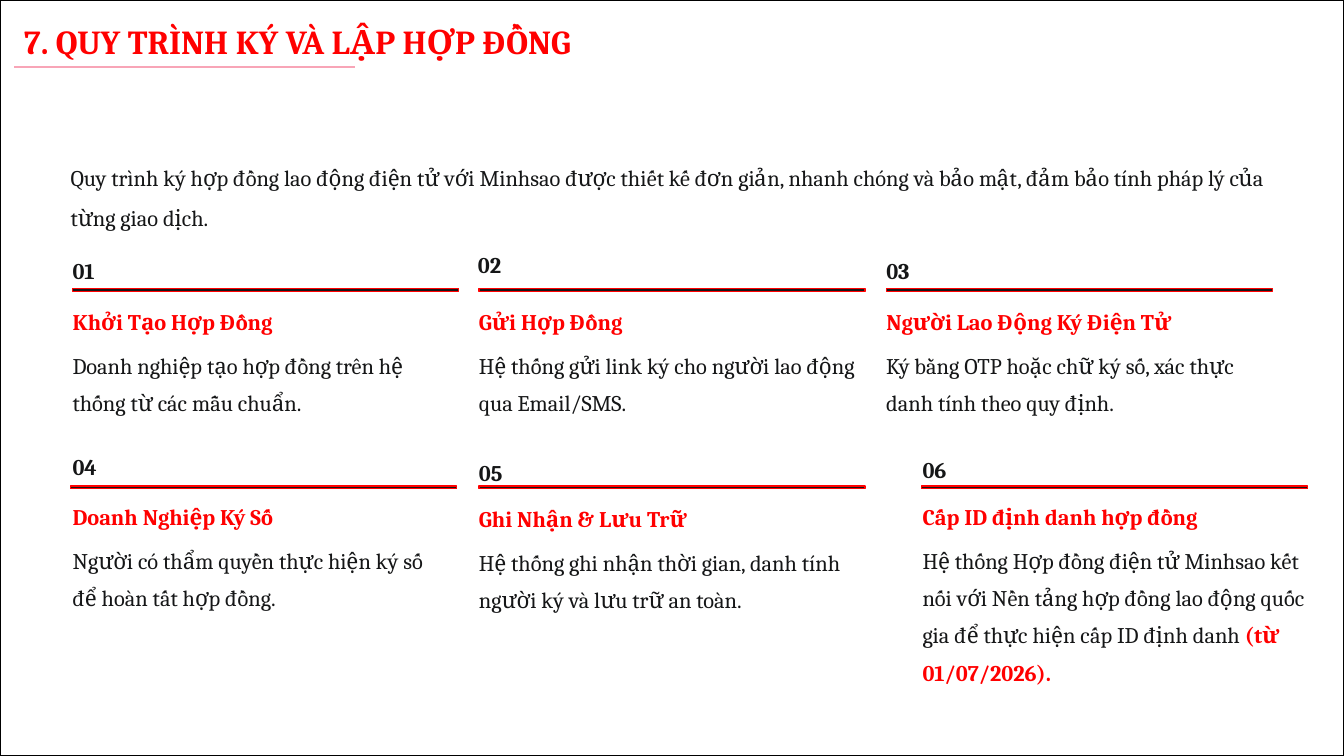
from dataclasses import dataclass

from pptx import Presentation
from pptx import util as u
from pptx.dml import color
from pptx.enum import shapes, text


@dataclass(frozen=True)
class Theme:
    font: str = "Cambria"
    ink: str = "151617"
    red: str = "FF0000"
    underline: str = "ED0033"
    paper: str = "FFFFFF"
    border: str = "000000"
    title_size: int = 24
    body_size: int = 16
    title_leading: float = 35.4
    intro_leading: float = 28.8
    number_leading: float = 24.4
    heading_leading: float = 22.9
    body_leading: float = 26.7


def px(length):
    return u.Emu(length * 9144)


class ProcessSlide:
    """Draws the elements of a process slide in one theme."""

    def __init__(self, slide, theme):
        self.slide = slide
        self.theme = theme

    def add_span(self, para, content, ink=None, bold=False, size=None):
        span = para.add_run()
        span.text = content
        span.font.name = self.theme.font
        span.font.size = u.Pt(size or self.theme.body_size)
        span.font.bold = bold
        span.font.color.rgb = color.RGBColor.from_string(ink or self.theme.ink)

    def text_box(self, left, top, width, height, leading, content, **style):
        box = self.slide.shapes.add_textbox(px(left), px(top), px(width), px(height))
        frame = box.text_frame
        frame.margin_left = frame.margin_top = 0
        frame.margin_right = frame.margin_bottom = 0
        frame.word_wrap = True
        frame.auto_size = text.MSO_AUTO_SIZE.SHAPE_TO_FIT_TEXT
        para = frame.paragraphs[0]
        para.line_spacing = u.Pt(leading)
        self.add_span(para, content, **style)
        return para

    def panel(self, left, top, width, height, fill, line=None):
        shape = self.slide.shapes.add_shape(
            shapes.MSO_SHAPE.RECTANGLE, px(left), px(top), px(width), px(height))
        shape.shadow.inherit = False
        shape.fill.solid()
        shape.fill.fore_color.rgb = color.RGBColor.from_string(fill)
        if line:
            shape.line.color.rgb = color.RGBColor.from_string(line)
            shape.line.width = u.Pt(1)
        else:
            shape.line.fill.background()

    def title(self, content):
        theme = self.theme
        self.text_box(24, 12, 1101, 45, theme.title_leading, content,
                      ink=theme.red, bold=True, size=theme.title_size)
        self.panel(14, 66, 338, 1, theme.underline)

    def step(self, number, left, number_left, number_top, bar_left, bar_top,
             heading_top, body_width, heading, body, accent):
        theme = self.theme
        self.text_box(number_left, number_top, 45, 34, theme.number_leading,
                      f"{number:02}", bold=True)
        self.panel(bar_left, bar_top, 383, 3, theme.ink, theme.red)
        self.text_box(left, heading_top, 382, 32, theme.heading_leading, heading,
                      ink=theme.red, bold=True)
        para = self.text_box(left, heading_top + 38, body_width, 76,
                             theme.body_leading, body)
        if accent:
            self.add_span(para, accent, ink=theme.red, bold=True)


STEPS = [
    (72, 72, 248, 72, 286, 301, 383, "Khởi Tạo Hợp Đồng",
     "Doanh nghiệp tạo hợp đồng trên hệ thống từ các mẫu chuẩn.", ""),
    (475, 474, 242, 475, 286, 301, 383, "Gửi Hợp Đồng",
     "Hệ thống gửi link ký cho người lao động qua Email/SMS.", ""),
    (879, 879, 248, 879, 286, 301, 383, "Người Lao Động Ký Điện Tử",
     "Ký bằng OTP hoặc chữ ký số, xác thực danh tính theo quy định.", ""),
    (72, 72, 442, 70, 482, 494, 373, "Doanh Nghiệp Ký Số",
     "Người có thẩm quyền thực hiện ký số để hoàn tất hợp đồng.", ""),
    (475, 475, 448, 475, 482, 496, 403, "Ghi Nhận & Lưu Trữ",
     "Hệ thống ghi nhận thời gian, danh tính người ký và lưu trữ an toàn.", ""),
    (915, 915, 445, 914, 482, 494, 400, "Cấp ID định danh hợp đồng",
     "Hệ thống Hợp đồng điện tử Minhsao kết nối với Nền tảng hợp đồng lao động "
     "quốc gia để thực hiện cấp ID định danh ", "(từ 01/07/2026)."),
]


def main():
    deck = Presentation()
    deck.slide_width, deck.slide_height = px(1333), px(750)
    theme = Theme()
    page = ProcessSlide(deck.slides.add_slide(deck.slide_layouts[6]), theme)
    page.panel(0, 0, 1333, 750, theme.paper, theme.border)
    page.title("7. QUY TRÌNH KÝ VÀ LẬP HỢP ĐỒNG")
    page.text_box(70, 149, 1190, 81, theme.intro_leading,
                  "Quy trình ký hợp đồng lao động điện tử với Minhsao được thiết kế "
                  "đơn giản, nhanh chóng và bảo mật, đảm bảo tính pháp lý của từng "
                  "giao dịch.")
    for number, step in enumerate(STEPS, 1):
        page.step(number, *step)
    deck.save("out.pptx")


if __name__ == "__main__":
    main()
